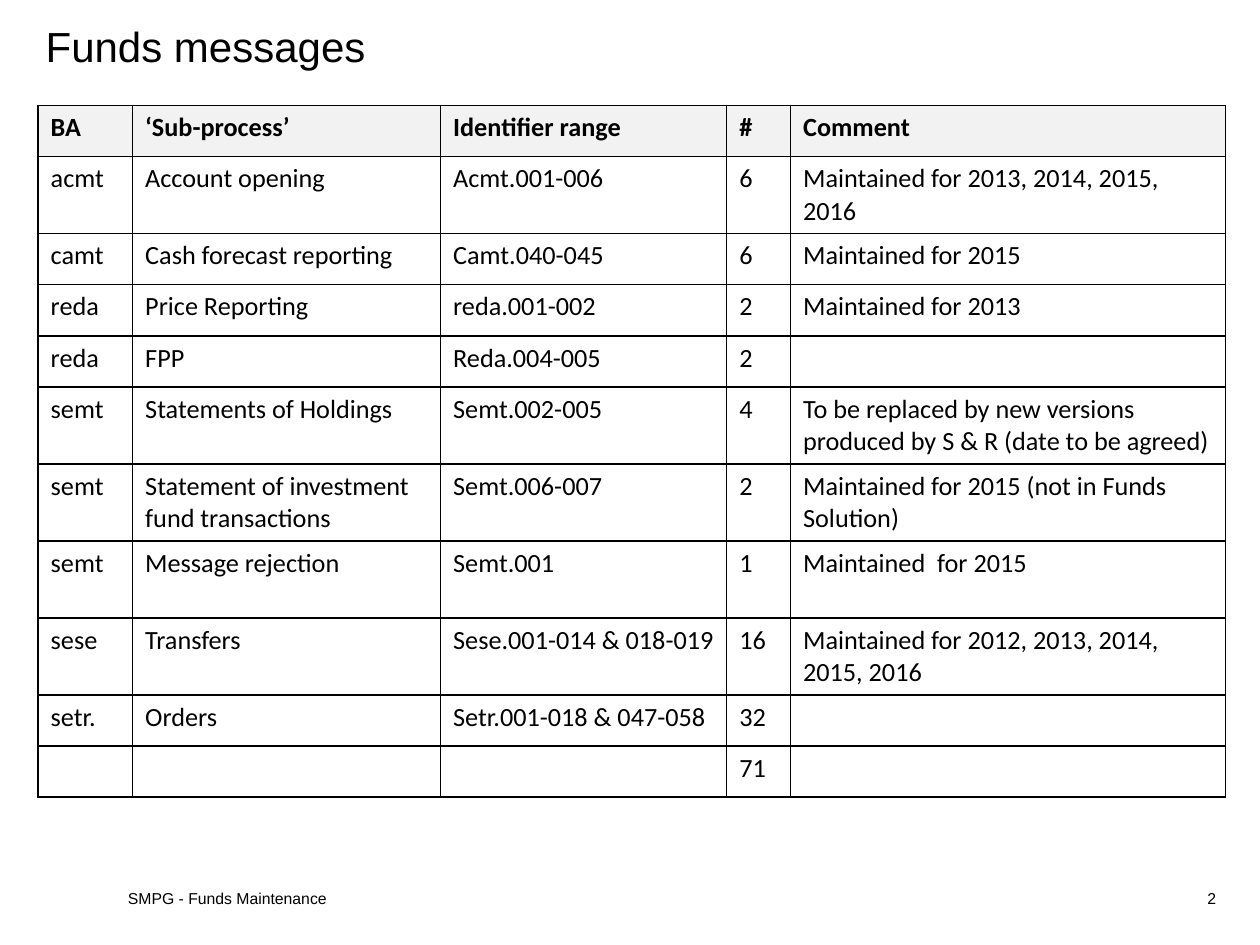
from lxml.etree import SubElement
from pptx import Presentation
from pptx.dml.color import RGBColor
from pptx.enum.text import MSO_ANCHOR as Anchor, PP_ALIGN as Align
from pptx.oxml.ns import qn
from pptx.util import Pt

BLACK = RGBColor(0x00, 0x00, 0x00)
WHITE = RGBColor(0xFF, 0xFF, 0xFF)
HEADER_GREY = RGBColor(0xF2, 0xF2, 0xF2)

COLUMN_WIDTHS = [54, 176, 163.5, 36.5, 248.5]
SINGLE_LINE, DOUBLE_LINE = 29.2, 44
TALL_ROWS = {1, 5, 6, 7, 8}
MESSAGES = [
    ("BA", "‘Sub-process’", "Identifier range", "#", "Comment"),
    ("acmt", "Account opening", "Acmt.001-006", "6", "Maintained for 2013, 2014, 2015, 2016"),
    ("camt", "Cash forecast reporting", "Camt.040-045", "6", "Maintained for 2015"),
    ("reda", "Price Reporting", "reda.001-002", "2", "Maintained for 2013"),
    ("reda", "FPP", "Reda.004-005", "2", ""),
    ("semt", "Statements of Holdings", "Semt.002-005", "4",
     "To be replaced by new versions produced by S & R (date to be agreed)"),
    ("semt", "Statement of investment fund transactions", "Semt.006-007", "2",
     "Maintained for 2015 (not in Funds Solution)"),
    ("semt", "Message rejection", "Semt.001", "1", "Maintained  for 2015"),
    ("sese", "Transfers", "Sese.001-014 & 018-019", "16",
     "Maintained for 2012, 2013, 2014, 2015, 2016"),
    ("setr.", "Orders", "Setr.001-018 & 047-058", "32", ""),
    ("", "", "", "71", ""),
]


def write_text(frame, text, font="Arial", size=9, bold=False, align=Align.LEFT):
    paragraph = frame.paragraphs[0]
    paragraph.alignment = align
    if text:
        run = paragraph.add_run()
        run.text = text
        run.font.name = font
        run.font.size = Pt(size)
        run.font.bold = bold
        run.font.color.rgb = BLACK


class SlideBuilder:
    """Adds text boxes and ruled tables in one style to a slide."""

    def __init__(self, slide, border_width=1, border_color=BLACK):
        self.slide = slide
        self.border_width = border_width
        self.border_color = border_color

    def text_box(self, left, top, width, height, text, anchor=Anchor.MIDDLE, **text_format):
        shape = self.slide.shapes.add_textbox(Pt(left), Pt(top), Pt(width), Pt(height))
        frame = shape.text_frame
        frame.word_wrap = True
        frame.vertical_anchor = anchor
        write_text(frame, text, **text_format)

    def border(self, cell):
        properties = cell._tc.get_or_add_tcPr()
        for position, side in enumerate(("a:lnL", "a:lnR", "a:lnT", "a:lnB")):
            line = SubElement(properties, qn(side), w=str(Pt(self.border_width)))
            fill = SubElement(line, qn("a:solidFill"))
            SubElement(fill, qn("a:srgbClr"), val=str(self.border_color))
            properties.insert(position, line)

    def table(self, left, top, rows, widths, heights):
        frame = self.slide.shapes.add_table(
            len(rows), len(widths), Pt(left), Pt(top), Pt(sum(widths)), Pt(sum(heights)))
        table = frame.table
        table.first_row = table.horz_banding = False
        for column, width in zip(table.columns, widths):
            column.width = Pt(width)
        for row_index, (row, values) in enumerate(zip(table.rows, rows)):
            row.height = Pt(heights[row_index])
            is_header = row_index == 0
            for cell, value in zip(row.cells, values):
                cell.fill.solid()
                cell.fill.fore_color.rgb = HEADER_GREY if is_header else WHITE
                self.border(cell)
                write_text(cell.text_frame, value, font="Calibri", size=15, bold=is_header)


def main():
    presentation = Presentation()
    presentation.slide_width, presentation.slide_height = Pt(720), Pt(540)
    builder = SlideBuilder(presentation.slides.add_slide(presentation.slide_layouts[6]))
    builder.text_box(19, 8, 600, 34.5, "Funds messages", anchor=Anchor.TOP, size=24)
    heights = [DOUBLE_LINE if index in TALL_ROWS else SINGLE_LINE
               for index in range(len(MESSAGES))]
    builder.table(21.8, 60.3, MESSAGES, COLUMN_WIDTHS, heights)
    builder.text_box(66, 504, 447, 18, "SMPG - Funds Maintenance")
    builder.text_box(642, 504, 60, 18, "2", align=Align.RIGHT)
    presentation.save("out.pptx")


if __name__ == "__main__":
    main()
